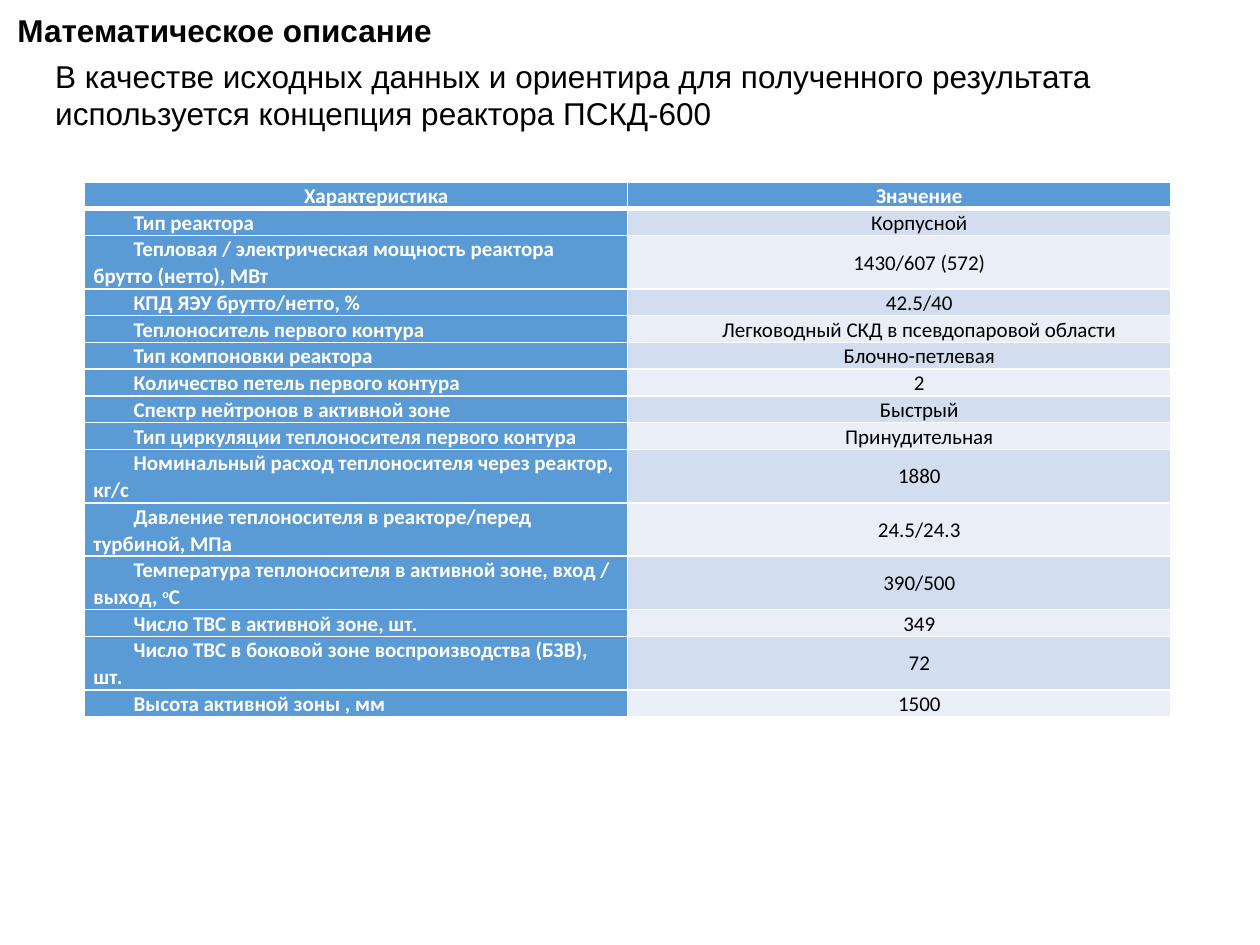
from dataclasses import dataclass

from lxml import etree
from pptx import Presentation
from pptx.dml.color import RGBColor
from pptx.enum.text import MSO_ANCHOR, MSO_AUTO_SIZE, PP_ALIGN
from pptx.oxml.ns import qn
from pptx.util import Pt

LEFT, CENTER = PP_ALIGN.LEFT, PP_ALIGN.CENTER
MIDDLE = MSO_ANCHOR.MIDDLE
FIT_SHAPE = MSO_AUTO_SIZE.SHAPE_TO_FIT_TEXT


@dataclass(frozen=True)
class Theme:
    text: str = "000000"
    light: str = "FFFFFF"
    accent: str = "5B9BD5"
    bands: tuple = ("D2DEEF", "EAEFF7")
    heading_font: str = "Arial"
    table_font: str = "Calibri"
    heading_size: float = 18
    table_size: float = 12


THEME = Theme()

HEADER = ("Характеристика", "Значение")
# A label given as a tuple holds text, superscript, text
ROWS = [
    ("Тип реактора", "Корпусной"),
    ("Тепловая / электрическая мощность реактора брутто (нетто), МВт",
     "1430/607 (572)"),
    ("КПД ЯЭУ брутто/нетто, %", "42.5/40"),
    ("Теплоноситель первого контура", "Легководный СКД в псевдопаровой области"),
    ("Тип компоновки реактора", "Блочно-петлевая"),
    ("Количество петель первого контура", "2"),
    ("Спектр нейтронов в активной зоне", "Быстрый"),
    ("Тип циркуляции теплоносителя первого контура", "Принудительная"),
    ("Номинальный расход теплоносителя через реактор, кг/с", "1880"),
    ("Давление теплоносителя в реакторе/перед турбиной, МПа", "24.5/24.3"),
    (("Температура теплоносителя в активной зоне, вход / выход, ", "о", "С"),
     "390/500"),
    ("Число ТВС в активной зоне, шт.", "349"),
    ("Число ТВС в боковой зоне воспроизводства (БЗВ), шт.", "72"),
    ("Высота активной зоны , мм", "1500"),
]


def write(tf, text, font, size, color, bold=False, align=LEFT,
          indent=0, spacing=None):
    p = tf.paragraphs[0]
    p.alignment = align
    if spacing:
        p.line_spacing = spacing
    if indent:
        pPr = p._p.get_or_add_pPr()
        pPr.set("marL", "0")
        pPr.set("indent", str(Pt(indent)))
    parts = (text,) if isinstance(text, str) else text
    for i, part in enumerate(parts):
        r = p.add_run()
        r.text = part
        r.font.name, r.font.size, r.font.bold = font, Pt(size), bold
        r.font.color.rgb = RGBColor.from_string(color)
        if i % 2:
            r._r.get_or_add_rPr().set("baseline", "30000")


def add_heading(slide, box, text, bold=False, wrap=True):
    sp = slide.shapes.add_textbox(*map(Pt, box))
    tf = sp.text_frame
    tf.word_wrap = wrap
    tf.auto_size = FIT_SHAPE
    write(tf, text, THEME.heading_font, THEME.heading_size, THEME.text, bold)


def set_borders(cell, top=1, bottom=1):
    tcPr = cell._tc.get_or_add_tcPr()
    for side, width in (("L", 1), ("R", 1), ("T", top), ("B", bottom)):
        ln = etree.SubElement(tcPr, qn(f"a:ln{side}"), w=str(Pt(width)))
        fill = etree.SubElement(ln, qn("a:solidFill"))
        etree.SubElement(fill, qn("a:srgbClr"), val=THEME.light)


def add_data_table(slide, box):
    rows = [HEADER] + ROWS
    left, top, width, line_height = box
    table = slide.shapes.add_table(
        len(rows), len(HEADER), Pt(left), Pt(top), Pt(width),
        Pt(line_height * len(rows))).table
    table.horz_banding = False
    for col in table.columns:
        col.width = Pt(width / len(HEADER))

    for i, row in enumerate(rows):
        # Labels longer than one line take two
        lines = 2 if len("".join(row[0])) > 45 else 1
        table.rows[i].height = Pt(line_height * lines)
        for j, text in enumerate(row):
            cell = table.cell(i, j)
            strong = i == 0 or j == 0
            set_borders(cell, top=3 if i == 1 else 1, bottom=3 if i == 0 else 1)
            cell.fill.solid()
            cell.fill.fore_color.rgb = RGBColor.from_string(
                THEME.accent if strong else THEME.bands[(i - 1) % 2])
            cell.vertical_anchor = MIDDLE
            cell.margin_left = cell.margin_right = Pt(5)
            cell.margin_top = cell.margin_bottom = Pt(0)
            write(cell.text_frame, text, THEME.table_font, THEME.table_size,
                  THEME.light if strong else THEME.text, bold=strong,
                  align=CENTER if i == 0 or j else LEFT,
                  indent=23, spacing=1.06)


def main():
    prs = Presentation()
    prs.slide_width, prs.slide_height = Pt(720), Pt(540)
    slide = prs.slides.add_slide(prs.slide_layouts[6])

    # Introduction, data table and title
    add_heading(slide, (24.5, 28.8, 695.5, 51),
                "В качестве исходных данных и ориентира для полученного "
                "результата используется концепция реактора ПСКД-600")
    add_data_table(slide, (48.4, 104, 620.6, 15.25))
    add_heading(slide, (2.9, 2.9, 254, 29), "Математическое описание",
                bold=True, wrap=False)

    prs.save("out.pptx")


if __name__ == "__main__":
    main()
